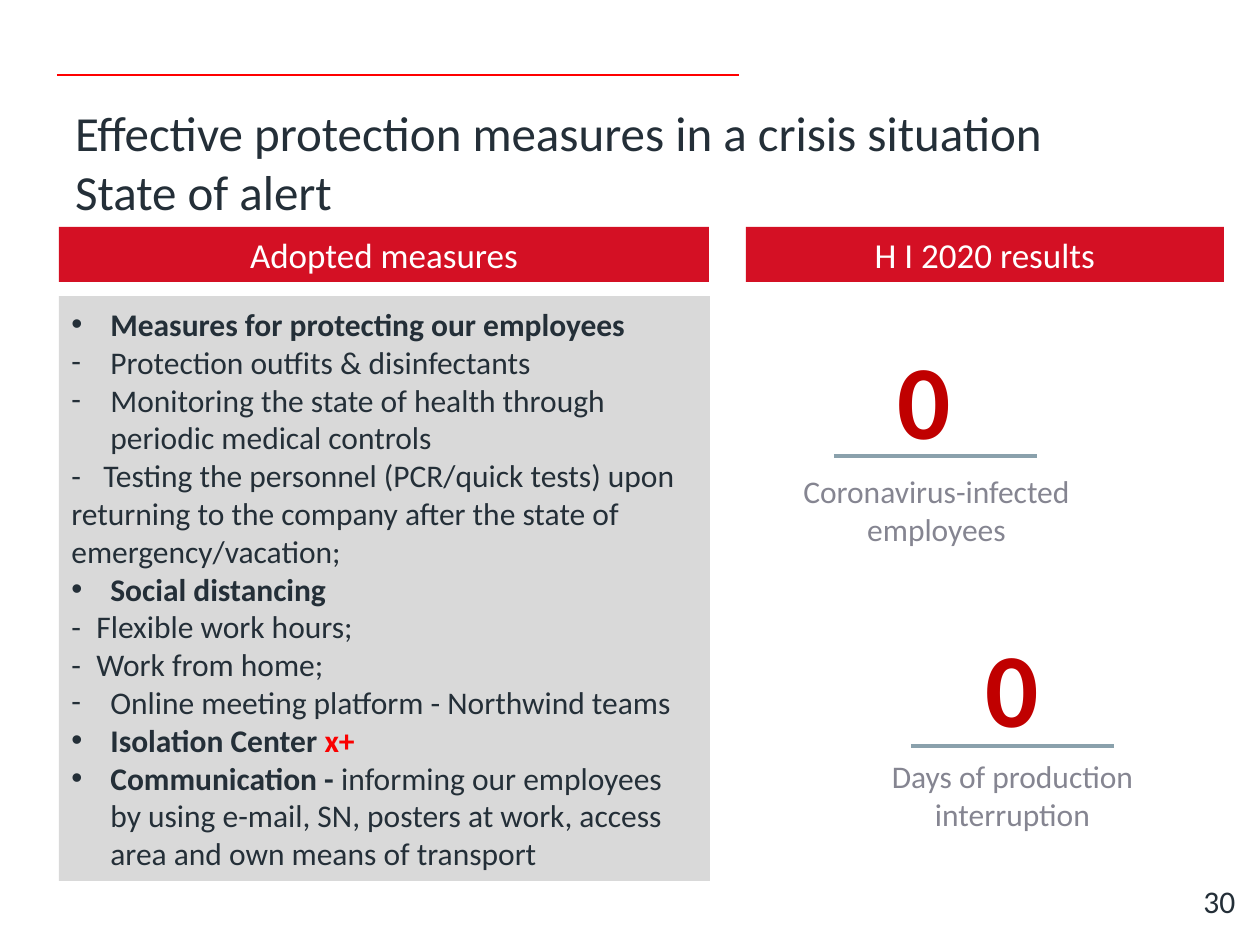
from dataclasses import dataclass
from typing import NamedTuple

from lxml.etree import SubElement
from pptx import Presentation
from pptx.dml.color import RGBColor
from pptx.enum.shapes import MSO_CONNECTOR as Connector, MSO_SHAPE as Preset
from pptx.enum.text import MSO_ANCHOR as Anchor, PP_ALIGN as Align
from pptx.oxml.ns import qn
from pptx.util import Emu, Pt

PX = 914400 / 126


@dataclass(frozen=True)
class Theme:
    font: str = "Calibri"
    dot_font: str = "Arial"
    ink: str = "242F38"
    white: str = "FFFFFF"
    banner: str = "D41024"
    panel: str = "D9D9D9"
    caption: str = "858591"
    figure: str = "C00000"
    rule: str = "8AA1AC"
    accent: str = "FF0000"
    highlight: str = "FA0000"
    title_size: int = 28
    banner_size: int = 20
    body_size: int = 18
    figure_size: int = 60


THEME = Theme()


class Box(NamedTuple):
    left: int
    top: int
    width: int
    height: int


class Span(NamedTuple):
    text: str
    bold: bool = False
    color: str = THEME.ink


class Measure(NamedTuple):
    spans: tuple[Span, ...]
    bullet: str = ""
    tab: int = 0


class Banner(NamedTuple):
    text: str
    box: Box


class Result(NamedTuple):
    figure: str
    caption: str
    figure_box: Box
    caption_box: Box
    rule_left: int
    rule_top: int


RULE_WIDTH = 203
HANGING = 39

BANNERS = (
    Banner("Adopted measures", Box(59, 227, 650, 55)),
    Banner("H I 2020 results", Box(746, 227, 478, 55)),
)

MEASURES = (
    Measure((Span("Measures for protecting our employees", True),), "•"),
    Measure((Span("Protection outfits & disinfectants"),), "-"),
    Measure((Span("Monitoring the state of health through periodic medical controls"),), "-"),
    Measure((Span("-\tTesting the personnel (PCR/quick tests) upon returning to the "
                  "company after the state of emergency/vacation;"),), tab=32),
    Measure((Span("Social distancing", True),), "•"),
    Measure((Span("-\tFlexible work hours;"),), tab=25),
    Measure((Span("-\tWork from home;"),), tab=25),
    Measure((Span("Online meeting platform - Northwind teams"),), "-"),
    Measure((Span("Isolation Center ", True), Span("x+", True, THEME.highlight)), "•"),
    Measure((Span("Communication - ", True),
             Span("informing our employees by using e-mail, SN, posters at work, "
                  "access area and own means of transport")), "•"),
)

RESULTS = (
    Result("0", "Coronavirus-infected employees",
           Box(784, 328, 281, 140), Box(762, 466, 349, 89), 834, 456),
    Result("0", "Days of production interruption",
           Box(872, 616, 281, 140), Box(838, 751, 349, 89), 911, 746),
)


def emu(pixels: int) -> Emu:
    return Emu(round(pixels * PX))


def place(box: Box) -> list[Emu]:
    return [emu(length) for length in box]


def style_run(run, size: int, color: str, bold: bool = False) -> None:
    run.font.name = THEME.font
    run.font.size = Pt(size)
    run.font.bold = bold
    run.font.color.rgb = RGBColor.from_string(color)


def write(shape, text: str, size: int, color: str, bold: bool = False,
          align: Align = Align.LEFT, anchor: Anchor = Anchor.TOP) -> None:
    """Fill a shape with one uniformly styled paragraph."""
    frame = shape.text_frame
    frame.word_wrap = True
    frame.vertical_anchor = anchor
    paragraph = frame.paragraphs[0]
    paragraph.text = text
    paragraph.alignment = align
    for run in paragraph.runs:
        style_run(run, size, color, bold)


def add_block(shapes, box: Box, color: str):
    block = shapes.add_shape(Preset.RECTANGLE, *place(box))
    block.shadow.inherit = False
    block.fill.solid()
    block.fill.fore_color.rgb = RGBColor.from_string(color)
    block.line.fill.background()
    return block


def add_rule(shapes, left: int, top: int, width: int, color: str, weight: float) -> None:
    rule = shapes.add_connector(Connector.STRAIGHT, emu(left), emu(top),
                                emu(left + width), emu(top))
    rule.line.color.rgb = RGBColor.from_string(color)
    rule.line.width = Pt(weight)
    SubElement(rule._element.spPr, qn("a:effectLst"))


def add_banner(shapes, banner: Banner) -> None:
    write(add_block(shapes, banner.box, THEME.banner), banner.text, THEME.banner_size,
          THEME.white, align=Align.CENTER, anchor=Anchor.MIDDLE)


def format_measure(paragraph, measure: Measure) -> None:
    """Set the hanging bullet or tab stop, then the runs."""
    paragraph.alignment = Align.LEFT
    properties = paragraph._p.get_or_add_pPr()
    if measure.bullet:
        properties.set("marL", str(emu(HANGING)))
        properties.set("indent", str(-emu(HANGING)))
        bullet_font = THEME.dot_font if measure.bullet == "•" else THEME.font
        SubElement(properties, qn("a:buFont"), typeface=bullet_font)
        SubElement(properties, qn("a:buChar"), char=measure.bullet)
    if measure.tab:
        stops = SubElement(properties, qn("a:tabLst"))
        SubElement(stops, qn("a:tab"), pos=str(emu(measure.tab)), algn="l")
    for span in measure.spans:
        run = paragraph.add_run()
        run.text = span.text
        style_run(run, THEME.body_size, span.color, span.bold)


def add_measures(shapes, box: Box) -> None:
    frame = add_block(shapes, box, THEME.panel).text_frame
    frame.word_wrap = True
    frame.vertical_anchor = Anchor.MIDDLE
    for index, measure in enumerate(MEASURES):
        paragraph = frame.add_paragraph() if index else frame.paragraphs[0]
        format_measure(paragraph, measure)


def add_result(shapes, result: Result) -> None:
    group = shapes.add_group_shape().shapes
    write(group.add_textbox(*place(result.caption_box)), result.caption,
          THEME.body_size, THEME.caption, align=Align.CENTER)
    write(group.add_textbox(*place(result.figure_box)), result.figure,
          THEME.figure_size, THEME.figure, bold=True, align=Align.CENTER)
    add_rule(group, result.rule_left, result.rule_top, RULE_WIDTH, THEME.rule, 2)


def main() -> None:
    presentation = Presentation()
    presentation.slide_width, presentation.slide_height = emu(1260), emu(945)
    shapes = presentation.slides.add_slide(presentation.slide_layouts[6]).shapes

    add_rule(shapes, 57, 75, 682, THEME.accent, 1.5)
    title = shapes.add_textbox(*place(Box(50, 96, 1202, 131)))
    title.text_frame.margin_left = emu(25)
    write(title, "Effective protection measures in a crisis situation\vState of alert",
          THEME.title_size, THEME.ink)
    write(shapes.add_textbox(*place(Box(1191, 874, 66, 53))), "30",
          THEME.body_size, THEME.ink, anchor=Anchor.MIDDLE)
    for banner in BANNERS:
        add_banner(shapes, banner)
    add_measures(shapes, Box(59, 296, 651, 585))
    for result in RESULTS:
        add_result(shapes, result)

    presentation.save("out.pptx")


if __name__ == "__main__":
    main()
